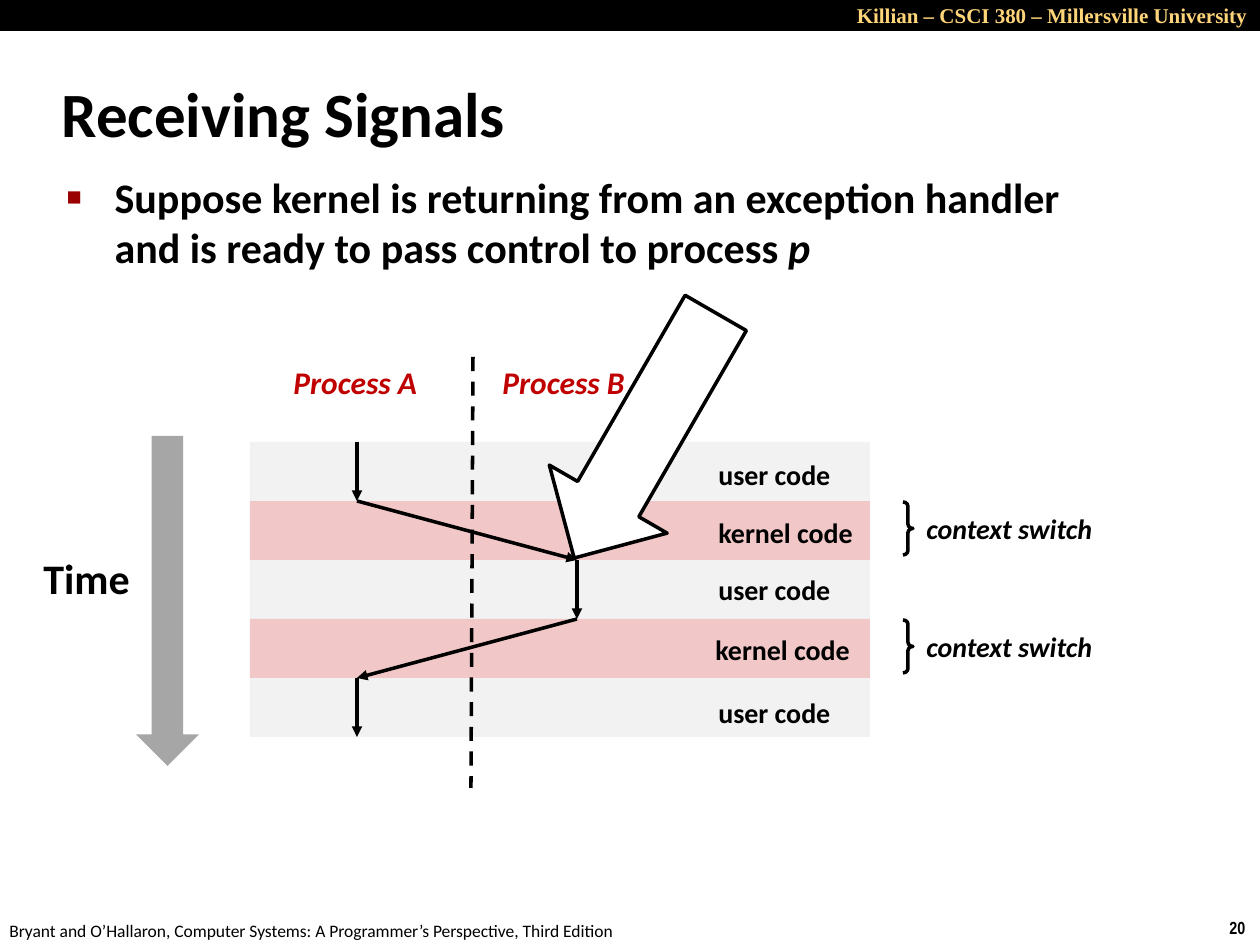
from itertools import pairwise

from lxml.etree import SubElement
from pptx import Presentation
from pptx.dml.color import RGBColor
from pptx.enum.dml import MSO_LINE
from pptx.enum.shapes import MSO_CONNECTOR, MSO_SHAPE
from pptx.enum.text import MSO_ANCHOR, MSO_AUTO_SIZE, PP_ALIGN
from pptx.oxml.ns import qn
from pptx.util import Emu, Pt

COLORS = {
    "black": "000000", "white": "FFFFFF", "gold": "FFD579", "bullet": "990000",
    "process": "C00000", "user": "F2F2F2", "kernel": "F1C7C7", "time": "A6A6A6",
}


def px(length):
    """Turn whole pixels, 126 to the inch, into EMU."""
    return Emu(round(length * 914400 / 126))


def rgb(name):
    """Look up a named colour."""
    return RGBColor.from_string(COLORS[name])


def add_run(paragraph, text, size, color="black", bold=True, italic=False, font="Calibri"):
    """Append one formatted run."""
    run = paragraph.add_run()
    run.text = text
    run.font.name, run.font.size = font, Pt(size)
    run.font.bold, run.font.italic = bold, italic
    run.font.color.rgb = rgb(color)


def add_label(slide, box, text, size, align=PP_ALIGN.LEFT, **style):
    """Place a one-line text box."""
    frame = slide.shapes.add_textbox(*map(px, box)).text_frame
    frame.word_wrap = align == PP_ALIGN.RIGHT
    frame.paragraphs[0].alignment = align
    add_run(frame.paragraphs[0], text, size, **style)


def add_figure(slide, preset, box, fill=None, outlined=False):
    """Place a preset shape, filled, outlined or both."""
    figure = slide.shapes.add_shape(preset, *map(px, box))
    figure.shadow.inherit = False
    if fill:
        figure.fill.solid()
        figure.fill.fore_color.rgb = rgb(fill)
    else:
        figure.fill.background()
    if outlined:
        figure.line.color.rgb = rgb("black")
        figure.line.width = Pt(2)
    else:
        figure.line.fill.background()
    return figure


def add_stroke(slide, start, end):
    """Draw a black straight connector."""
    stroke = slide.shapes.add_connector(MSO_CONNECTOR.STRAIGHT, *map(px, (*start, *end)))
    stroke.line.color.rgb = rgb("black")
    stroke.line.width = Pt(2)
    SubElement(stroke._element.spPr, qn("a:effectLst"))
    return stroke


def add_header(slide, left, top, width, height):
    """Build the black course banner."""
    add_figure(slide, MSO_SHAPE.RECTANGLE, (left, top, width, height), "black")
    add_label(slide, (left + width - 431, top - 4, 431, 38),
              "Killian – CSCI 380 – Millersville University", 12, PP_ALIGN.RIGHT,
              color="gold", font="Times New Roman")


def add_footer(slide, left, top, width, height):
    """Build the book credit and the page number."""
    add_label(slide, (left + width - 43, top - 3, 43, height), "20", 10, font="Arial Narrow")
    add_label(slide, (left - 3, top, 640, height),
              "Bryant and O’Hallaron, Computer Systems: A Programmer’s Perspective, Third Edition",
              10, bold=False)


def move_placeholder(placeholder, box):
    """Move a placeholder and return its text frame without autofit."""
    placeholder.left, placeholder.top, placeholder.width, placeholder.height = map(px, box)
    frame = placeholder.text_frame
    frame.auto_size = MSO_AUTO_SIZE.NONE
    return frame


def fill_title(slide, *box):
    """Write the slide title."""
    frame = move_placeholder(slide.shapes.title, box)
    frame.vertical_anchor = MSO_ANCHOR.MIDDLE
    frame.paragraphs[0].alignment = PP_ALIGN.LEFT
    add_run(frame.paragraphs[0], "Receiving Signals", 36)


def fill_body(slide, *box):
    """Write the bulleted statement."""
    statement = move_placeholder(slide.placeholders[1], box).paragraphs[0]
    statement.space_before = Pt(5)
    add_run(statement, "Suppose kernel is returning from an exception handler "
            "and is ready to pass control to process ", 24)
    add_run(statement, "p", 24, italic=True)
    properties = statement._p.get_or_add_pPr()
    properties.set("marL", str(px(48)))
    properties.set("indent", str(-px(48)))
    bullet_color = SubElement(properties, qn("a:buClr"))
    SubElement(bullet_color, qn("a:srgbClr"), val=COLORS["bullet"])
    SubElement(properties, qn("a:buSzPct"), val="60000")
    SubElement(properties, qn("a:buChar"), char="■")


def add_time_axis(slide, left, top, width, height):
    """Build the downward time arrow and its label."""
    add_label(slide, (left, top + 110, 112, 63), "Time", 24)
    add_figure(slide, MSO_SHAPE.DOWN_ARROW, (left + width - 63, top, 63, height), "time")


def add_context_switch(slide, left, top, width, height):
    """Mark a kernel band with a brace and its label."""
    brace = add_figure(slide, MSO_SHAPE.RIGHT_BRACE, (left, top, 10, height), outlined=True)
    brace.adjustments[0] = 0.42
    add_label(slide, (left + 11, top + 3, width - 11, 47), "context switch", 16, italic=True)


def add_schedule(slide, left, top, width, height):
    """Build the code bands and the control flow between the processes."""
    band = height // 5
    process_a, process_b = left + 107, left + 327
    label_shifts = [(456, 9), (456, 8), (456, 6), (453, 7), (456, 11)]
    for row, (shift_x, shift_y) in enumerate(label_shifts):
        mode = ("user", "kernel")[row % 2]
        y = top + row * band
        add_figure(slide, MSO_SHAPE.RECTANGLE, (left, y, width, band), mode)
        add_label(slide, (left + shift_x, y + shift_y, 161 if row % 2 else 139, 47),
                  f"{mode} code", 16)
        if mode == "kernel":
            add_context_switch(slide, left + width + 33, y + 1, 205, 53)
    for name, shift in (("Process A", 31), ("Process B", 240)):
        add_label(slide, (left + shift, top - 85, 151, 50), name, 18,
                  color="process", italic=True)
    divider = add_stroke(slide, (left + 223, top - 85), (left + 221, top + 346))
    divider.line.dash_style = MSO_LINE.DASH
    columns = (process_a, process_a, process_b, process_b, process_a, process_a)
    stops = [(x, top + row * band) for row, x in enumerate(columns)]
    for start, end in pairwise(stops):
        step = add_stroke(slide, start, end)
        SubElement(step.line._get_or_add_ln(), qn("a:tailEnd"), type="triangle")


def add_pointer(slide, *box):
    """Point a large tilted arrow at the return to process B."""
    pointer = add_figure(slide, MSO_SHAPE.DOWN_ARROW, box, "white", outlined=True)
    pointer.adjustments[0], pointer.adjustments[1] = 0.52, 0.5
    pointer.rotation = 30


def main():
    """Build and save the slide."""
    deck = Presentation()
    deck.slide_width, deck.slide_height = px(1260), px(945)
    slide = deck.slides.add_slide(deck.slide_layouts[1])
    add_header(slide, 0, 0, 1260, 31)
    add_footer(slide, 0, 914, 1260, 34)
    fill_title(slide, 49, 60, 1046, 105)
    fill_body(slide, 54, 165, 1089, 150)
    add_time_axis(slide, 31, 436, 168, 330)
    add_schedule(slide, 250, 442, 620, 295)
    add_pointer(slide, 577, 294, 136, 283)
    deck.save("out.pptx")


if __name__ == "__main__":
    main()
